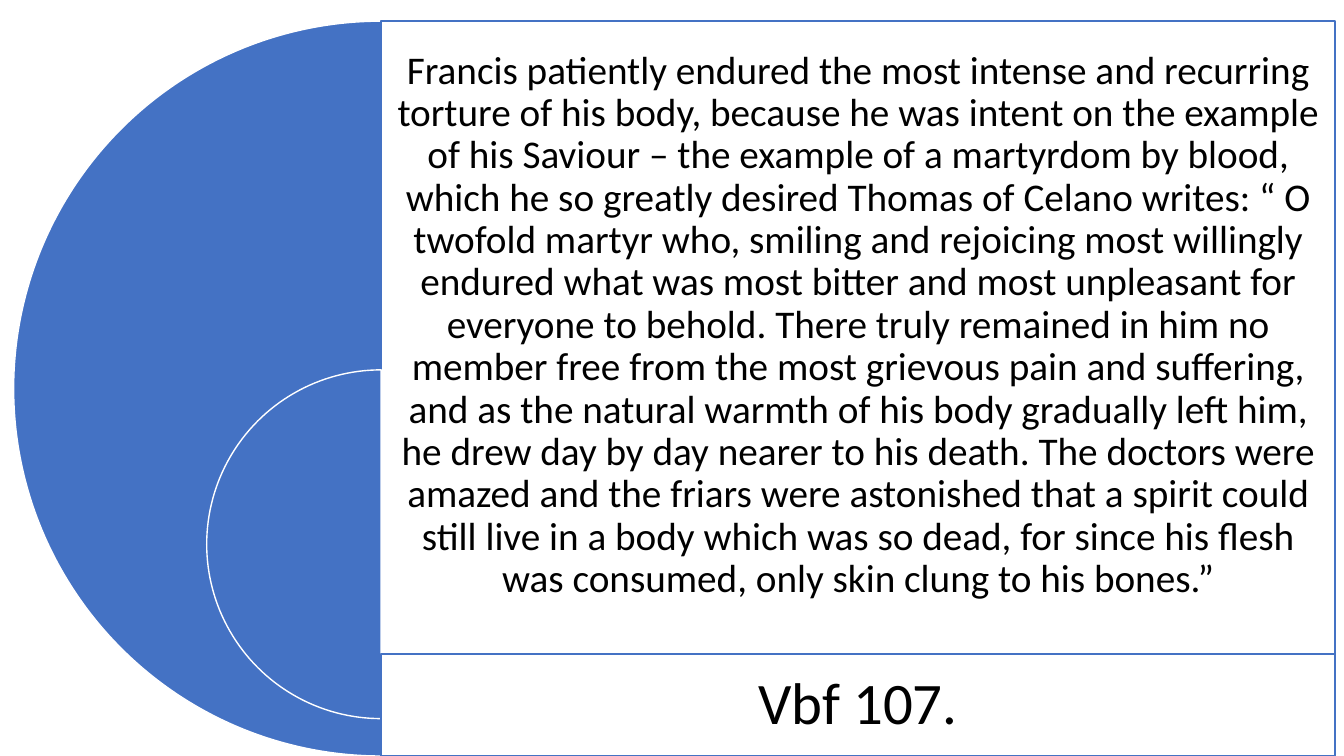
from dataclasses import dataclass

from lxml.etree import SubElement
from pptx import Presentation
from pptx.dml.color import RGBColor
from pptx.enum.shapes import MSO_SHAPE as Preset
from pptx.enum.text import MSO_ANCHOR as Anchor, PP_ALIGN as Align
from pptx.oxml.ns import qn
from pptx.util import Inches, Pt

WIDTH, HEIGHT = Inches(13.33), Inches(7.5)
DIVIDER, PANEL_WIDTH = 28.36, 70.97
BLUE, WHITE, BLACK = "4472C4", "FFFFFF", "000000"
PASSAGE = (
    "Francis patiently endured the most intense and recurring torture of his body, "
    "because he was intent on the example of his Saviour – the example of a martyrdom "
    "by blood, which he so greatly desired Thomas of Celano writes: “ O twofold martyr "
    "who, smiling and rejoicing most willingly endured what was most bitter and most "
    "unpleasant for everyone to behold. There truly remained in him no member free from "
    "the most grievous pain and suffering, and as the natural warmth of his body "
    "gradually left him, he drew day by day nearer to his death. The doctors were amazed "
    "and the friars were astonished that a spirit could still live in a body which was so "
    "dead, for since his flesh was consumed, only skin clung to his bones.”"
)


@dataclass(frozen=True)
class Section:
    """A half disc and its text panel, in percent of the slide's height."""

    disc_top: float
    disc_size: float
    panel_top: float
    text: str
    font_size: int
    inset: float
    bottom_inset: float


SECTIONS = (
    Section(2.8, 97.2, 2.8, PASSAGE, 28, 0.1, 1.35),
    Section(48.93, 46.13, 86.53, "Vbf 107.", 42, 0.17, 0.17),
)


def across(percent: float) -> int:
    """Turn a share of the slide's width into a length."""
    return round(WIDTH * percent / 100)


def down(percent: float) -> int:
    """Turn a share of the slide's height into a length."""
    return round(HEIGHT * percent / 100)


def color(value: str) -> RGBColor:
    """Turn a hex string into a colour."""
    return RGBColor.from_string(value)


def style(shape, fill: str, line: str) -> None:
    """Give a shape a plain fill and a one-point outline."""
    shape.shadow.inherit = False
    shape.fill.solid()
    shape.fill.fore_color.rgb = color(fill)
    shape.line.color.rgb = color(line)
    shape.line.width = Pt(1)


def draw_half_disc(slide, section: Section) -> None:
    """Draw the left half of a disc centred on the divider."""
    size = down(section.disc_size)
    left = across(DIVIDER) - size // 2
    shape = slide.shapes.add_shape(Preset.PIE, left, down(section.disc_top), size, size)
    shape.adjustments[0], shape.adjustments[1] = 54, 162
    style(shape, BLUE, WHITE)


def draw_panel(slide, section: Section) -> None:
    """Draw a translucent text panel from its top to the slide's bottom."""
    shape = slide.shapes.add_shape(
        Preset.RECTANGLE, across(DIVIDER), down(section.panel_top),
        across(PANEL_WIDTH), down(100 - section.panel_top),
    )
    style(shape, WHITE, BLUE)
    fill_color = shape.element.spPr.find(qn("a:solidFill")).find(qn("a:srgbClr"))
    SubElement(fill_color, qn("a:alpha"), val="90000")

    frame = shape.text_frame
    frame.word_wrap = True
    frame.vertical_anchor = Anchor.MIDDLE
    frame.margin_left = frame.margin_right = frame.margin_top = Inches(section.inset)
    frame.margin_bottom = Inches(section.bottom_inset)
    paragraph = frame.paragraphs[0]
    paragraph.text = section.text
    paragraph.alignment = Align.CENTER
    paragraph.line_spacing = 0.9
    paragraph.font.name = "Calibri"
    paragraph.font.size = Pt(section.font_size)
    paragraph.font.color.rgb = color(BLACK)


def main() -> None:
    """Build and save the slide."""
    presentation = Presentation()
    presentation.slide_width, presentation.slide_height = WIDTH, HEIGHT
    slide = presentation.slides.add_slide(presentation.slide_layouts[6])
    for section in SECTIONS:
        draw_half_disc(slide, section)
        draw_panel(slide, section)
    presentation.save("out.pptx")


if __name__ == "__main__":
    main()
